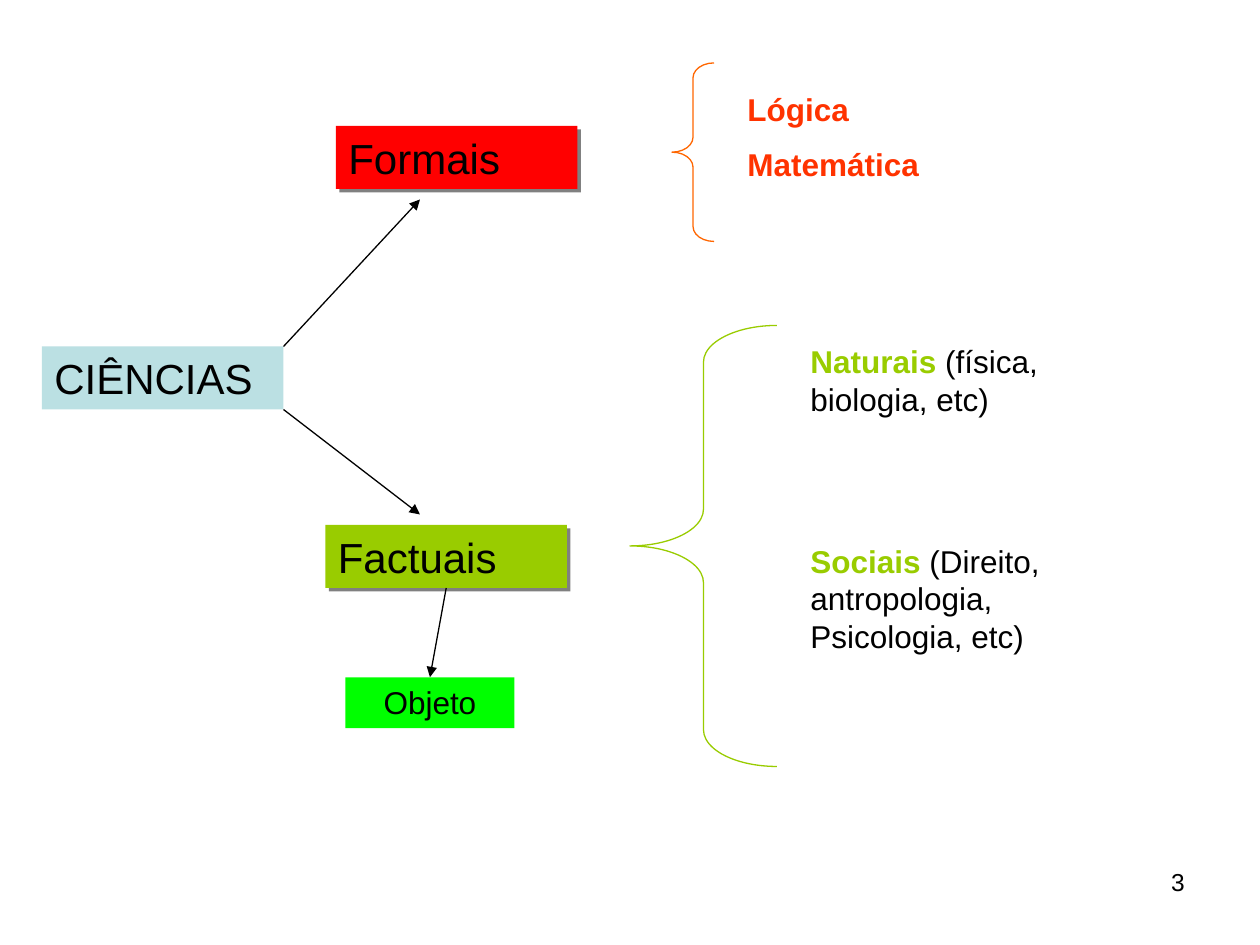
import pptx
import pptx.util
import pptx.dml.color
import pptx.enum.shapes
import pptx.enum.text
import pptx.oxml
import pptx.oxml.ns

KIND = pptx.enum.shapes.MSO_SHAPE
ALIGN = pptx.enum.text.PP_ALIGN
COLS, ROWS = 120, 90
WIDE, HIGH = pptx.util.Inches(10), pptx.util.Inches(7.5)
HUES = {
    "ink": "000000", "root": "BBE0E3", "formal": "FF0000", "fact": "99CC00",
    "goal": "00FF00", "brace": "FF6600", "logic": "FF3300", "shade": "808080",
}


def hue(name):
    """Return the named colour."""
    return pptx.dml.color.RGBColor.from_string(HUES[name])


def spot(col, row):
    """Turn a grid column and row into slide lengths."""
    return round(WIDE * col / COLS), round(HIGH * row / ROWS)


def area(col, row, wide, high):
    """Turn a grid area into left, top, width and height."""
    return spot(col, row) + spot(wide, high)


def style(font, size, tint="ink", bold=False):
    """Set face, size, colour and weight of a font."""
    font.name = "Arial"
    font.size = pptx.util.Pt(size)
    font.color.rgb = hue(tint)
    font.bold = bold


def write(shape, lines, size, tint="ink", bold=False, align=ALIGN.LEFT):
    """Write each line as a paragraph of one style."""
    frame = shape.text_frame
    frame.word_wrap = True
    frame.vertical_anchor = pptx.enum.text.MSO_ANCHOR.TOP
    for rank, line in enumerate(lines):
        para = frame.add_paragraph() if rank else frame.paragraphs[0]
        para.text = line
        para.alignment = align
        para.space_before = pptx.util.Pt(10 if rank else 0)
        style(para.font, size, tint, bold)


def shade(shape):
    """Give a shape a hard shadow to the lower right."""
    space = pptx.oxml.ns.nsdecls("a")
    effect = pptx.oxml.parse_xml(
        f'<a:outerShdw {space} dist="35900" dir="2700000" algn="ctr" '
        f'rotWithShape="0"><a:srgbClr val="{HUES["shade"]}"/></a:outerShdw>')
    shape._element.spPr.find(pptx.oxml.ns.qn("a:effectLst")).append(effect)


def box(slide, place, text, fill, size=24, align=ALIGN.LEFT, raised=False):
    """Add a filled box with a label."""
    shape = slide.shapes.add_shape(KIND.RECTANGLE, *area(*place))
    shape.shadow.inherit = False
    shape.fill.solid()
    shape.fill.fore_color.rgb = hue(fill)
    shape.line.fill.background()
    write(shape, [text], size, align=align)
    if raised:
        shade(shape)


def brace(slide, place, tint, curl):
    """Add a left brace with the given curl."""
    shape = slide.shapes.add_shape(KIND.LEFT_BRACE, *area(*place))
    shape.shadow.inherit = False
    shape.fill.background()
    shape.line.color.rgb = hue(tint)
    shape.line.width = pptx.util.Pt(0.75)
    shape.adjustments[0] = curl
    shape.adjustments[1] = 0.5


def note(slide, place, lines, size, **look):
    """Add a plain text box."""
    write(slide.shapes.add_textbox(*area(*place)), lines, size, **look)


def branch(slide, place, head, rest):
    """Add a text box with a bold head word and its examples."""
    frame = slide.shapes.add_textbox(*area(*place)).text_frame
    frame.word_wrap = True
    for text, tint, bold in ((head, "fact", True), (rest, "ink", False)):
        run = frame.paragraphs[0].add_run()
        run.text = text
        style(run.font, 18, tint, bold)


def arrow(slide, start, end):
    """Add a thin line with a triangle at its end."""
    line = slide.shapes.add_connector(
        pptx.enum.shapes.MSO_CONNECTOR.STRAIGHT, *spot(*start), *spot(*end))
    line.line.color.rgb = hue("ink")
    line.line.width = pptx.util.Pt(0.75)
    space = pptx.oxml.ns.nsdecls("a")
    line.line._get_or_add_ln().append(
        pptx.oxml.parse_xml(f'<a:tailEnd {space} type="triangle"/>'))
    line._element.spPr.append(pptx.oxml.parse_xml(f"<a:effectLst {space}/>"))


def main():
    """Build the slide on the branches of science."""
    deck = pptx.Presentation()
    deck.slide_width, deck.slide_height = WIDE, HIGH
    slide = deck.slides.add_slide(deck.slide_layouts[6])

    note(slide, (86, 82, 28, 6.25), ["3"], 14, align=ALIGN.RIGHT)
    box(slide, (4, 33, 23, 6), "CIÊNCIAS", "root")
    box(slide, (32, 12, 23, 6), "Formais", "formal", raised=True)
    box(slide, (31, 50, 23, 6), "Factuais", "fact", raised=True)
    brace(slide, (64, 6, 4, 17), "brace", 0.354)
    note(slide, (70, 8, 21, 10.2), ["Lógica", "Matemática"], 18,
         tint="logic", bold=True)
    brace(slide, (60, 31, 14, 42), "fact", 0.25)
    branch(slide, (76, 32, 25, 8.4), "Naturais", " (física, biologia, etc)")
    branch(slide, (76, 51, 25, 12), "Sociais",
           " (Direito, antropologia, Psicologia, etc)")
    arrow(slide, (27, 33), (40, 19))
    arrow(slide, (27, 39), (40, 49))
    box(slide, (32.9, 64.5, 16.1, 4.85), "Objeto", "goal", 18, ALIGN.CENTER)
    arrow(slide, (42.5, 56), (40.95, 64.5))
    deck.save("out.pptx")


if __name__ == "__main__":
    main()
